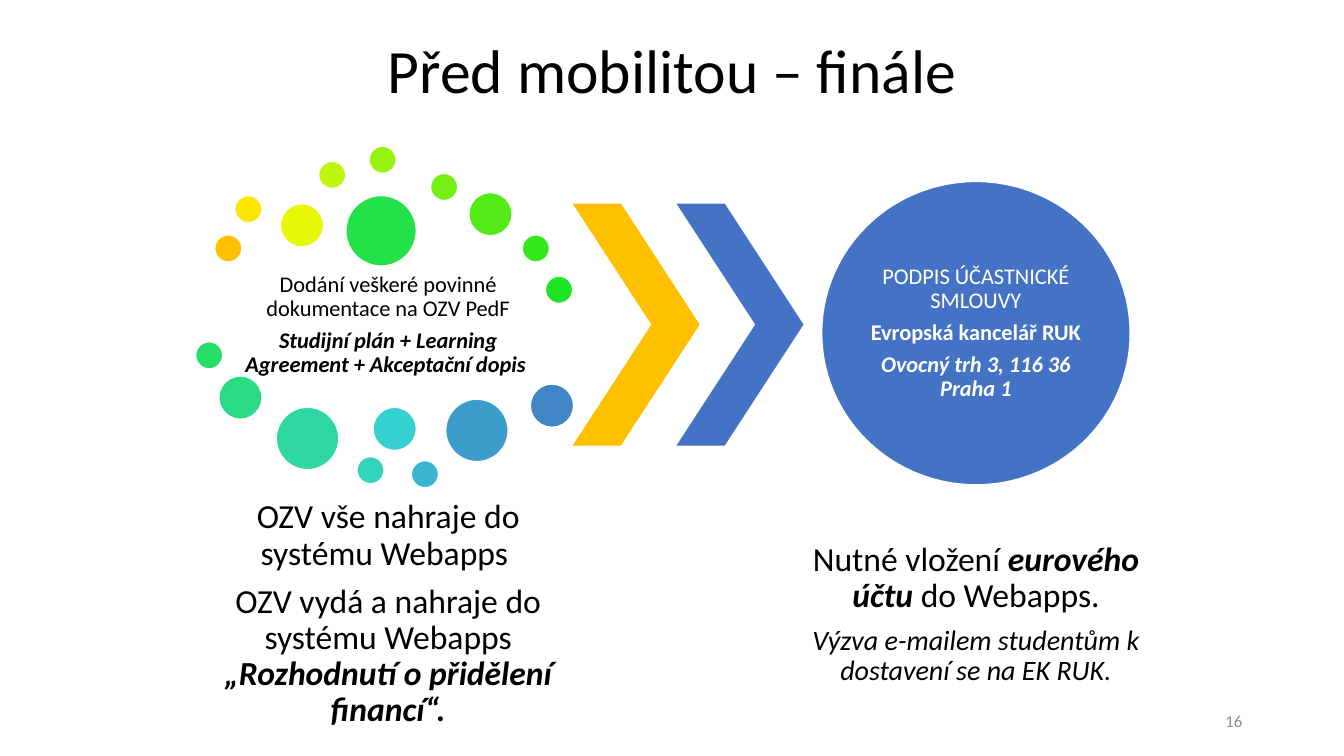
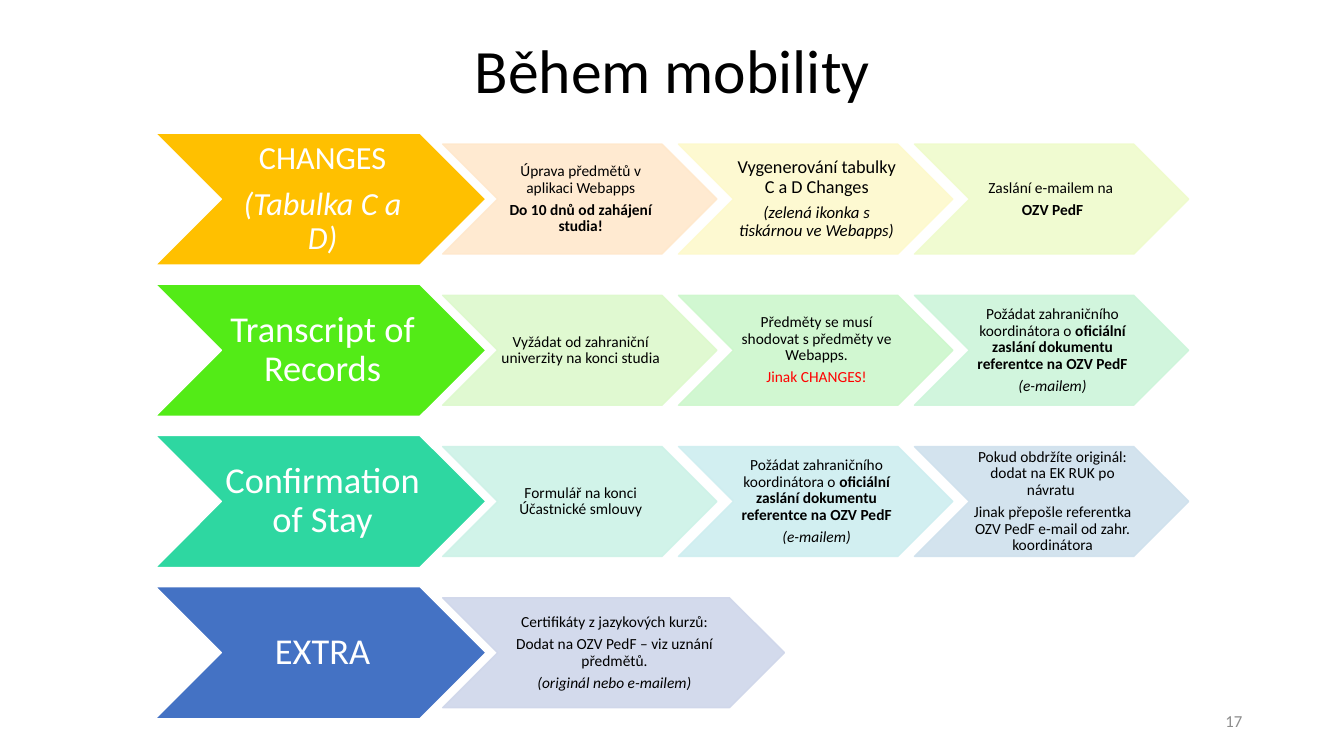
from dataclasses import dataclass

from lxml import etree
from pptx import Presentation
from pptx.dml.color import RGBColor
from pptx.enum.shapes import MSO_SHAPE
from pptx.enum.text import MSO_ANCHOR, PP_ALIGN
from pptx.oxml.ns import qn
from pptx.util import Inches, Pt

CHEVRON = MSO_SHAPE.CHEVRON
ELLIPSE = MSO_SHAPE.OVAL
MIDDLE = MSO_ANCHOR.MIDDLE
CENTER = PP_ALIGN.CENTER
RIGHT = PP_ALIGN.RIGHT


@dataclass(frozen=True)
class Theme:
    font: str = "Calibri"
    black: str = "000000"
    white: str = "FFFFFF"
    gray: str = "8C8C8C"
    red: str = "FF0000"
    gold: str = "FFC000"
    green: str = "53EB17"
    teal: str = "2ED7A1"
    blue: str = "4472C4"
    title: int = 44
    topic: int = 26
    topic_small: int = 23
    summary: int = 24
    summary_small: int = 20
    body: int = 16
    step_large: int = 13
    note: int = 12
    step: int = 11
    line_spacing: float = 0.9
    paragraph_gap: float = 0.35
    step_opacity: int = 90


THEME = Theme()


@dataclass(frozen=True)
class Para:
    spans: tuple
    size: int = THEME.step
    color: str = THEME.black
    style: str = ""


def para(text, size=THEME.step, color=THEME.black, style=""):
    return Para(((text, ""),), size, color, style)


DOTS = [
    (2.13, 2.33, 0.27, THEME.gold),
    (2.33, 1.94, 0.27, "FCE604"),
    (2.78, 2.02, 0.43, "E6F808"),
    (3.16, 1.6, 0.27, "BEF50C"),
    (3.66, 1.45, 0.27, "98F20F"),
    (4.27, 1.72, 0.27, "75EE13"),
    (4.65, 1.91, 0.43, THEME.green),
    (5.18, 2.33, 0.27, "34E81B"),
    (5.41, 2.74, 0.27, "1FE426"),
    (3.43, 1.94, 0.7, "23E148"),
    (1.94, 3.39, 0.27, "26DE68"),
    (2.17, 3.73, 0.43, "2ADA85"),
    (2.74, 4.04, 0.62, THEME.teal),
    (3.54, 4.53, 0.27, "32D4BA"),
    (3.7, 4.04, 0.43, "35D1D1"),
    (4.08, 4.57, 0.27, "39B6CE"),
    (4.42, 3.96, 0.62, "3D9DCA"),
    (5.26, 3.81, 0.43, "4086C7"),
]

DOCUMENTS = [
    para("Dodání veškeré povinné dokumentace na OZV PedF", THEME.body),
    para("Studijní plán + Learning Agreement + Akceptační dopis ", THEME.body, style="bi"),
]
UPLOADS = [
    para("OZV vše nahraje do systému Webapps ", THEME.summary),
    Para((("OZV vydá a nahraje do systému Webapps ", ""),
          ("„Rozhodnutí o přidělení financí“.", "bi")), THEME.summary),
]
SIGNATURE = [
    para("PODPIS ÚČASTNICKÉ SMLOUVY", THEME.body, THEME.white),
    para("Evropská kancelář RUK", THEME.body, THEME.white, "b"),
    para("Ovocný trh 3, 116 36 Praha 1", THEME.body, THEME.white, "bi"),
]
ACCOUNT = [
    Para((("Nutné vložení ", ""), ("eurového účtu ", "bi"), ("do Webapps.", "")), THEME.summary),
    para("Výzva e-mailem studentům k dostavení se na EK RUK.", THEME.summary_small, style="i"),
]
OFFICIAL_REQUEST = [
    Para((("Požádat zahraničního koordinátora o ", ""),
          ("oficiální zaslání dokumentu referentce na OZV PedF", "b"))),
    para("(e-mailem)", style="i"),
]


def topic(text):
    return [para(text, THEME.topic, THEME.white)]


TOPICS = [
    (THEME.gold,
     [para("CHANGES", THEME.topic_small, THEME.white),
      para("(Tabulka C a D)", THEME.topic_small, THEME.white, "i")],
     [("FFE8CC", [para("Úprava předmětů v aplikaci Webapps"),
                  para("Do 10 dnů od zahájení studia!", style="b")]),
      ("FDF9CC", [para("Vygenerování tabulky C a D Changes", THEME.step_large),
                  para("(zelená ikonka s tiskárnou ve Webapps)", THEME.note, style="i")]),
      ("EFFBCC", [para("Zaslání e-mailem na "), para("OZV PedF", style="b")])]),
    (THEME.green, topic("Transcript of Records"),
     [("DDF9CC", [para("Vyžádat od zahraniční univerzity na konci studia")]),
      ("CDF7CC", [para("Předměty se musí shodovat s předměty ve Webapps."),
                  para("Jinak CHANGES!", color=THEME.red)]),
      ("CDF5DA", OFFICIAL_REQUEST)]),
    (THEME.teal, topic("Confirmation of Stay"),
     [("CDF2E7", [para("Formulář na konci Účastnické smlouvy")]),
      ("CEEEF0", OFFICIAL_REQUEST),
      ("CFE1ED", [para("Pokud obdržíte originál: dodat na EK RUK po návratu "),
                  para("Jinak přepošle referentka OZV PedF e-mail od zahr. koordinátora")])]),
    (THEME.blue, topic("EXTRA"),
     [("CFD6EA", [para("Certifikáty z jazykových kurzů:"),
                  para("Dodat na OZV PedF – viz uznání předmětů."),
                  para("(originál nebo e-mailem)", style="i")])]),
]


def rgb(color):
    return RGBColor.from_string(color)


def set_style(font, style):
    if style:
        font.bold = "b" in style
        font.italic = "i" in style


def write_text(shape, content, insets, align=CENTER, line_spacing=THEME.line_spacing):
    frame = shape.text_frame
    frame.word_wrap = True
    frame.vertical_anchor = MIDDLE
    (frame.margin_left, frame.margin_top,
     frame.margin_right, frame.margin_bottom) = [Inches(inset) for inset in insets]
    for index, item in enumerate(content):
        paragraph = frame.add_paragraph() if index else frame.paragraphs[0]
        paragraph.alignment = align
        paragraph.line_spacing = line_spacing
        paragraph.space_after = Pt(item.size * THEME.paragraph_gap)
        paragraph.font.name = THEME.font
        paragraph.font.size = Pt(item.size)
        paragraph.font.color.rgb = rgb(item.color)
        set_style(paragraph.font, item.style)
        for text, style in item.spans:
            span = paragraph.add_run()
            span.text = text
            set_style(span.font, style)


def add_text(page, at, content, insets=(0.1, 0.05, 0.1, 0.05), **layout):
    box = page.shapes.add_textbox(*[Inches(length) for length in at])
    write_text(box, content, insets, **layout)


def add_figure(page, kind, at, fill, outline=THEME.white):
    shape = page.shapes.add_shape(kind, *[Inches(length) for length in at])
    shape.shadow.inherit = False
    shape.fill.solid()
    shape.fill.fore_color.rgb = rgb(fill)
    if outline:
        shape.line.color.rgb = rgb(outline)
        shape.line.width = Pt(1)
    else:
        shape.line.fill.background()
    return shape


def set_opacity(shape, percent):
    for color in shape.element.spPr.iter(qn("a:srgbClr")):
        etree.SubElement(color, qn("a:alpha"), val=str(percent * 1000))


def add_page(deck, title, number):
    page = deck.slides.add_slide(deck.slide_layouts[6])
    add_text(page, (0.92, 0, 11.5, 1.45), [para(title, THEME.title)])
    add_text(page, (9.42, 6.95, 3, 0.4), [para(str(number), THEME.note, THEME.gray)],
             align=RIGHT, line_spacing=1.0)
    return page


def build_finale(deck):
    page = add_page(deck, "Před mobilitou – finále", 16)
    add_text(page, (2.39, 2.54, 2.92, 1.37), DOCUMENTS, (0.02,) * 4)
    for left, top, size, color in DOTS:
        add_figure(page, ELLIPSE, (left, top, size, size), color)
    for left, color in ((5.68, THEME.gold), (6.71, THEME.blue)):
        arrow = add_figure(page, CHEVRON, (left, 2.02, 1.26, 2.4), color, None)
        arrow.adjustments[0] = 0.62
    circle = add_figure(page, ELLIPSE, (8.15, 1.8, 3.06, 3.01), THEME.blue)
    write_text(circle, SIGNATURE, (0,) * 4)
    for left, content in ((2.14, UPLOADS), (7.97, ACCOUNT)):
        add_text(page, (left, 5.04, 3.42, 2.11), content, (0.03,) * 4)


def build_during(deck):
    page = add_page(deck, "Během mobility", 17)
    topic_height, step_height = 1.31, 1.09
    for row, (color, heading, steps) in enumerate(TOPICS):
        top = 1.32 + row * 1.5
        head = add_figure(page, CHEVRON, (1.54, top, 3.28, topic_height), color)
        write_text(head, heading, (0.04, 0.02, 0, 0.02))
        step_top = top + (topic_height - step_height) / 2
        step_width = 2.72 if len(steps) > 1 else 3.39
        for column, (tint, content) in enumerate(steps):
            at = (4.39 + column * 2.34, step_top, step_width, step_height)
            step = add_figure(page, CHEVRON, at, tint, tint)
            set_opacity(step, THEME.step_opacity)
            write_text(step, content, (0.02, 0.01, 0, 0.01))


def main():
    deck = Presentation()
    deck.slide_width = Inches(13.33)
    deck.slide_height = Inches(7.5)
    build_finale(deck)
    build_during(deck)
    deck.save("out.pptx")


if __name__ == "__main__":
    main()
